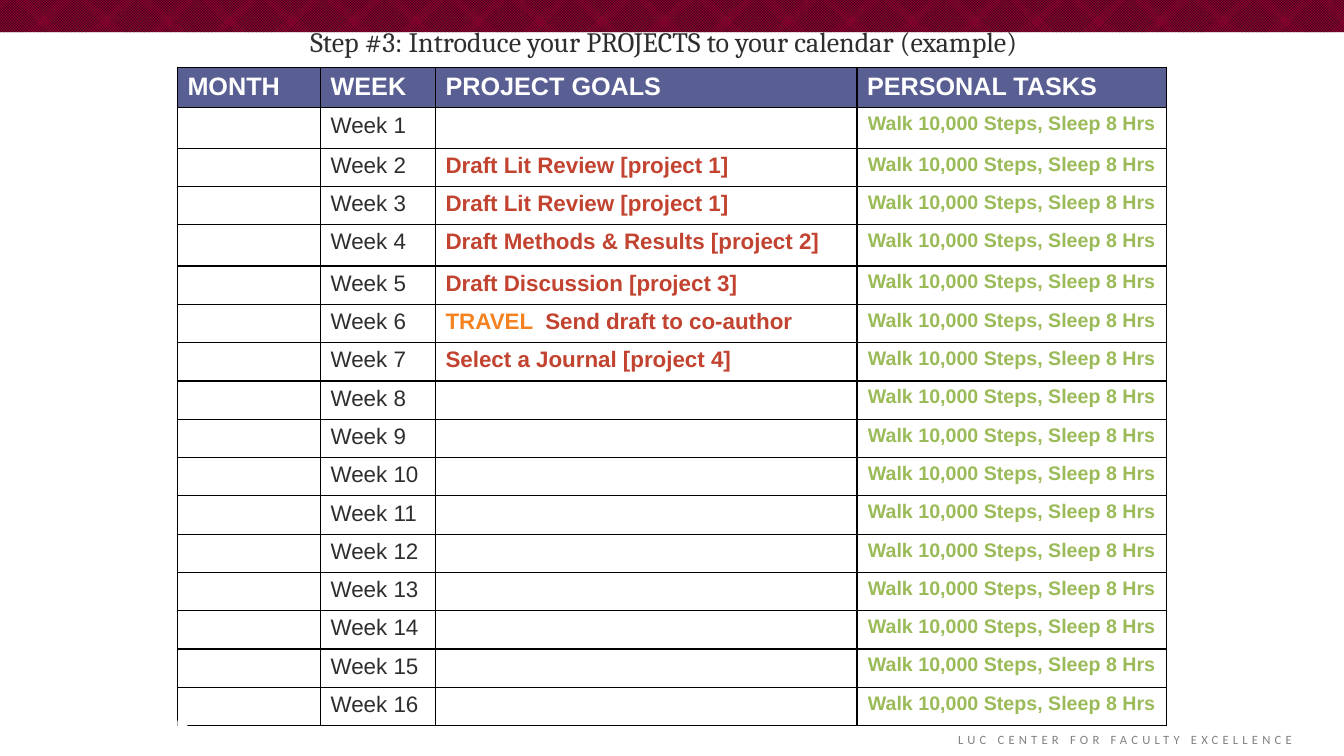
from dataclasses import dataclass

from lxml import etree
from pptx import Presentation
from pptx.dml.color import RGBColor
from pptx.enum.dml import MSO_PATTERN
from pptx.enum.shapes import MSO_SHAPE
from pptx.enum.text import MSO_ANCHOR, MSO_AUTO_SIZE, PP_ALIGN
from pptx.oxml.ns import qn
from pptx.util import Inches, Pt

RECT = MSO_SHAPE.RECTANGLE
SMALL_CHECK = MSO_PATTERN.SMALL_CHECKER_BOARD
TOP = MSO_ANCHOR.TOP
NO_AUTOFIT = MSO_AUTO_SIZE.NONE
LEFT, CENTER, RIGHT = PP_ALIGN.LEFT, PP_ALIGN.CENTER, PP_ALIGN.RIGHT
TITLE_ONLY = 5


@dataclass(frozen=True)
class Theme:
    ink: str = "2E2E2E"
    white: str = "FFFFFF"
    header: str = "595E93"
    border: str = "000000"
    goal: str = "C14330"
    travel: str = "F58220"
    personal: str = "9BBB59"
    band: str = "990033"
    band_check: str = "0D0D0D"
    footer: str = "808080"
    title_font: str = "Cambria"
    table_font: str = "Arial"
    footer_font: str = "Calibri"
    title_size: int = 20
    header_size: int = 18
    body_size: int = 16
    personal_size: int = 14
    footer_size: int = 9


def rgb(color):
    return RGBColor.from_string(color)


class SlideBuilder:
    def __init__(self, prs, theme):
        self.theme = theme
        self.s = prs.slides.add_slide(prs.slide_layouts[TITLE_ONLY])

    def style(self, p, font, size, color, bold=False, align=LEFT):
        p.alignment = align
        p.font.name, p.font.size, p.font.bold = font, Pt(size), bold
        p.font.color.rgb = rgb(color)

    def title(self, text, x, y, w, h):
        t = self.theme
        sp = self.s.shapes.title
        sp.left, sp.top, sp.width, sp.height = map(Inches, (x, y, w, h))
        tf = sp.text_frame
        tf.text = text
        tf.vertical_anchor, tf.auto_size = TOP, NO_AUTOFIT
        self.style(tf.paragraphs[0], t.title_font, t.title_size, t.ink, align=CENTER)

    def rect(self, x, y, w, h):
        sp = self.s.shapes.add_shape(RECT, *map(Inches, (x, y, w, h)))
        sp.shadow.inherit = False
        sp.line.fill.background()
        return sp

    def band(self, x, y, w, h):
        fill = self.rect(x, y, w, h).fill
        fill.patterned()
        fill.pattern = SMALL_CHECK
        fill.fore_color.rgb = rgb(self.theme.band_check)
        fill.back_color.rgb = rgb(self.theme.band)

    def patch(self, x, y, w, h):
        fill = self.rect(x, y, w, h).fill
        fill.solid()
        fill.fore_color.rgb = rgb(self.theme.white)

    def footer(self, text, x, y, w, h):
        t = self.theme
        tf = self.s.shapes.add_textbox(*map(Inches, (x, y, w, h))).text_frame
        tf.word_wrap = True
        p = tf.paragraphs[0]
        r = p.add_run()
        r.text = text
        self.style(p, t.footer_font, t.footer_size, t.footer, align=RIGHT)
        r.font._element.set("spc", "300")

    def cell_borders(self, cell):
        tc_pr = cell._tc.get_or_add_tcPr()
        for side in ("a:lnL", "a:lnR", "a:lnT", "a:lnB"):
            ln = etree.SubElement(tc_pr, qn(side), w=str(Pt(1)))
            fill = etree.SubElement(ln, qn("a:solidFill"))
            etree.SubElement(fill, qn("a:srgbClr"), val=self.theme.border)

    def cell(self, cell, runs, size, color, bold=False, align=LEFT, fill=None):
        """Fill one cell; runs is a list of (text, colour or None)."""
        self.cell_borders(cell)
        if fill:
            cell.fill.solid()
            cell.fill.fore_color.rgb = rgb(fill)
        else:
            cell.fill.background()
        p = cell.text_frame.paragraphs[0]
        self.style(p, self.theme.table_font, size, color, bold, align)
        for text, run_color in runs:
            r = p.add_run()
            r.text = text
            if run_color:
                r.font.color.rgb = rgb(run_color)

    def calendar(self, headings, goals, personal, weeks, x, y, widths, heights):
        t = self.theme
        table = self.s.shapes.add_table(
            weeks + 1, len(widths), Inches(x), Inches(y),
            Inches(sum(widths)), Inches(sum(heights))).table
        table.first_row = table.horz_banding = False
        for column, width in zip(table.columns, widths):
            column.width = Inches(width)
        for row, height in zip(table.rows, heights):
            row.height = Inches(height)
        for col, heading in enumerate(headings):
            self.cell(table.cell(0, col), [(heading, None)], t.header_size,
                      t.white, bold=True, fill=t.header)
        for week in range(1, weeks + 1):
            month, label, goal, task = table.rows[week].cells
            self.cell(month, [], t.body_size, t.ink)
            self.cell(label, [(f"Week {week}", None)], t.body_size, t.ink)
            self.cell(goal, goals.get(week, []), t.body_size, t.goal, bold=True)
            self.cell(task, [(personal, None)], t.personal_size, t.personal,
                      bold=True, align=CENTER)


def main():
    prs = Presentation()
    prs.slide_width, prs.slide_height = Inches(13.33), Inches(7.5)
    theme = Theme()
    slide = SlideBuilder(prs, theme)
    goals = {
        2: [("Draft Lit Review [project 1]", None)],
        3: [("Draft Lit Review [project 1]", None)],
        4: [("Draft Methods & Results [project 2]", None)],
        5: [("Draft Discussion [project 3]", None)],
        6: [("TRAVEL ", theme.travel), (" Send draft to co-author", None)],
        7: [("Select a Journal [project 4]", None)],
    }
    slide.title("Step #3: Introduce your PROJECTS to your calendar (example)",
                1.67, 0.19, 9.83, 0.58)
    slide.calendar(
        ["MONTH", "WEEK", "PROJECT GOALS", "PERSONAL TASKS"], goals,
        "Walk 10,000 Steps, Sleep 8 Hrs", 16, 1.76, 0.67,
        widths=[1.42, 1.14, 4.18, 3.07],
        heights=[0.4, 0.4, 0.38, 0.38, 0.41] + [0.38] * 12)
    slide.band(0, 0, 13.33, 0.32)
    slide.footer("LUC CENTER FOR FACULTY EXCELLENCE", 4.61, 7.21, 8.3, 0.25)
    slide.patch(1.76, 7.15, 0.1, 0.16)
    prs.save("out.pptx")


if __name__ == "__main__":
    main()
